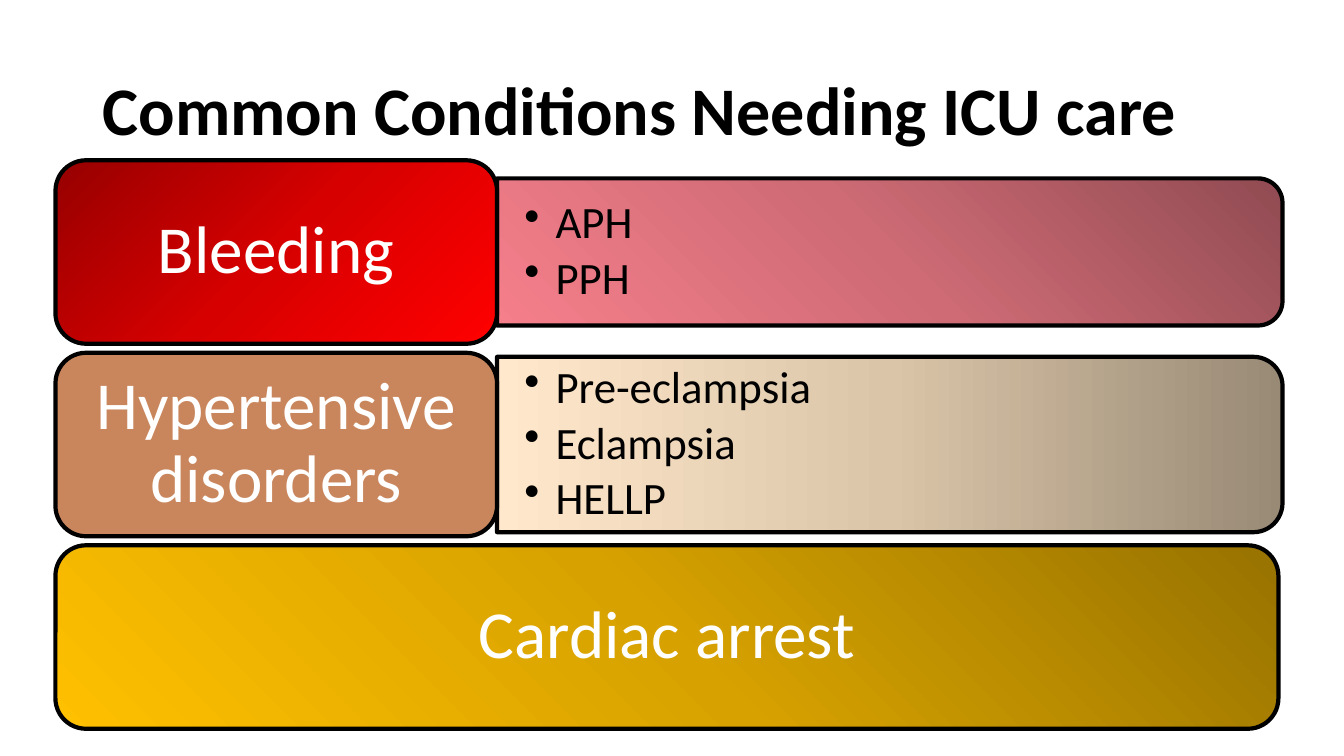
from dataclasses import dataclass

from lxml import etree
from pptx import Presentation
from pptx.dml.color import RGBColor
from pptx.enum.shapes import MSO_SHAPE
from pptx.enum.text import MSO_ANCHOR, PP_ALIGN
from pptx.oxml.ns import qn
from pptx.util import Inches, Pt

ROUND = MSO_SHAPE.ROUNDED_RECTANGLE
TAB = MSO_SHAPE.ROUND_2_SAME_RECTANGLE
MIDDLE = MSO_ANCHOR.MIDDLE
CENTER = PP_ALIGN.CENTER
LEFT = PP_ALIGN.LEFT


@dataclass(frozen=True)
class Theme:
    font: str = "Calibri"
    ink: str = "000000"
    light: str = "FFFFFF"
    red: tuple = ("970000", "D70000", "FF0000")
    rose: tuple = ("914B52", "CE6B75", "F57F8B")
    brown: tuple = ("C9865C",)
    cream: tuple = ("998A76", "DAC5A8", "FFE8CB")
    gold: tuple = ("977200", "D7A200", "FFC000")
    title: float = 48.6
    label: float = 48
    item: float = 32
    edge: float = 3


class Board:
    def __init__(self, slide, theme):
        self.slide = slide
        self.theme = theme

    def paint(self, shape, tones, focus):
        """Fill with one tone, or blend three from a corner or along an angle."""
        fill = shape.fill
        if len(tones) == 1:
            fill.solid()
            fill.fore_color.rgb = RGBColor.from_string(tones[0])
            return
        fill.gradient()
        grad = shape._element.spPr.find(qn("a:gradFill"))
        grad.set("rotWithShape", "0")
        for child in list(grad):
            grad.remove(child)
        stops = etree.SubElement(grad, qn("a:gsLst"))
        for pos, tone in zip((0, 50000, 100000), tones):
            stop = etree.SubElement(stops, qn("a:gs"), pos=str(pos))
            etree.SubElement(stop, qn("a:srgbClr"), val=tone)
        if isinstance(focus, int):
            etree.SubElement(grad, qn("a:lin"), ang=str(focus * 60000), scaled="0")
        else:
            way = etree.SubElement(grad, qn("a:path"))
            way.set("path", "circle")
            sides = {side: "100000" for side in focus}
            etree.SubElement(way, qn("a:fillToRect"), **sides)

    def block(self, kind, left, top, width, height, tones, focus):
        shape = self.slide.shapes.add_shape(
            kind, Inches(left), Inches(top), Inches(width), Inches(height))
        shape.shadow.inherit = False
        self.paint(shape, tones, focus)
        shape.line.color.rgb = RGBColor.from_string(self.theme.ink)
        shape.line.width = Pt(self.theme.edge)
        return shape

    def letter(self, shape, text, size, color, align=LEFT, bold=False, pad=(0.1, 0.05)):
        frame = shape.text_frame
        frame.word_wrap = True
        frame.vertical_anchor = MIDDLE
        frame.margin_left = frame.margin_right = Inches(pad[0])
        frame.margin_top = frame.margin_bottom = Inches(pad[1])
        frame.text = text
        for para in frame.paragraphs:
            para.alignment = align
            para.line_spacing = 0.9
            for run in para.runs:
                run.font.name = self.theme.font
                run.font.size = Pt(size)
                run.font.bold = bold
                run.font.color.rgb = RGBColor.from_string(color)
        return frame

    def box(self, left, top, width, height):
        return self.slide.shapes.add_textbox(
            Inches(left), Inches(top), Inches(width), Inches(height))

    def title(self, text):
        self.letter(self.box(0.92, 0.4, 11.5, 1.45), text,
                    self.theme.title, self.theme.ink, bold=True)

    def label(self, text, left, top, width, height, tones, focus):
        shape = self.block(ROUND, left, top, width, height, tones, focus)
        self.letter(shape, text, self.theme.label, self.theme.light,
                    CENTER, pad=(0.29, 0.19))

    def panel(self, items, left, mid, width, height, tones, focus):
        """Draw a bullet panel, rounded on its right, centred on height mid."""
        shape = self.block(TAB, left + (width - height) / 2, mid - width / 2,
                           height, width, tones, focus)
        shape.rotation = 90
        inner = height - 0.15
        frame = self.letter(self.box(left, mid - inner / 2, width - 0.07, inner),
                            "\n".join(items), self.theme.item, self.theme.ink,
                            pad=(0.27, 0.14))
        for para in frame.paragraphs:
            para.level = 1
            para.space_after = Pt(5)
            props = para._p.get_or_add_pPr()
            props.set("marL", str(Inches(0.31)))
            props.set("indent", str(-Inches(0.31)))
            etree.SubElement(props, qn("a:buChar"), char="•")


def main():
    deck = Presentation()
    deck.slide_width = Inches(13.33)
    deck.slide_height = Inches(7.5)
    theme = Theme()
    board = Board(deck.slides.add_slide(deck.slide_layouts[6]), theme)
    board.title("Common Conditions Needing ICU care")

    left, top, pitch, height = 0.55, 1.59, 1.91, 1.82
    slim, wide = 4.38, 12.13
    rows = [
        ("Bleeding", slim, theme.red, "rb",
         ("APH", "PPH"), 1.46, theme.rose, "lb"),
        ("Hypertensive disorders", slim, theme.brown, "",
         ("Pre-eclampsia", "Eclampsia", "HELLP"), 1.74, theme.cream, 180),
        ("Cardiac arrest", wide, theme.gold, "lb", (), 0, (), ""),
    ]
    for i, (name, width, tones, focus, items, tall, hues, aim) in enumerate(rows):
        y = top + i * pitch
        if items:
            board.panel(items, left + slim, y + height / 2, 7.79, tall, hues, aim)
        board.label(name, left, y, width, height, tones, focus)

    deck.save("out.pptx")


if __name__ == "__main__":
    main()
